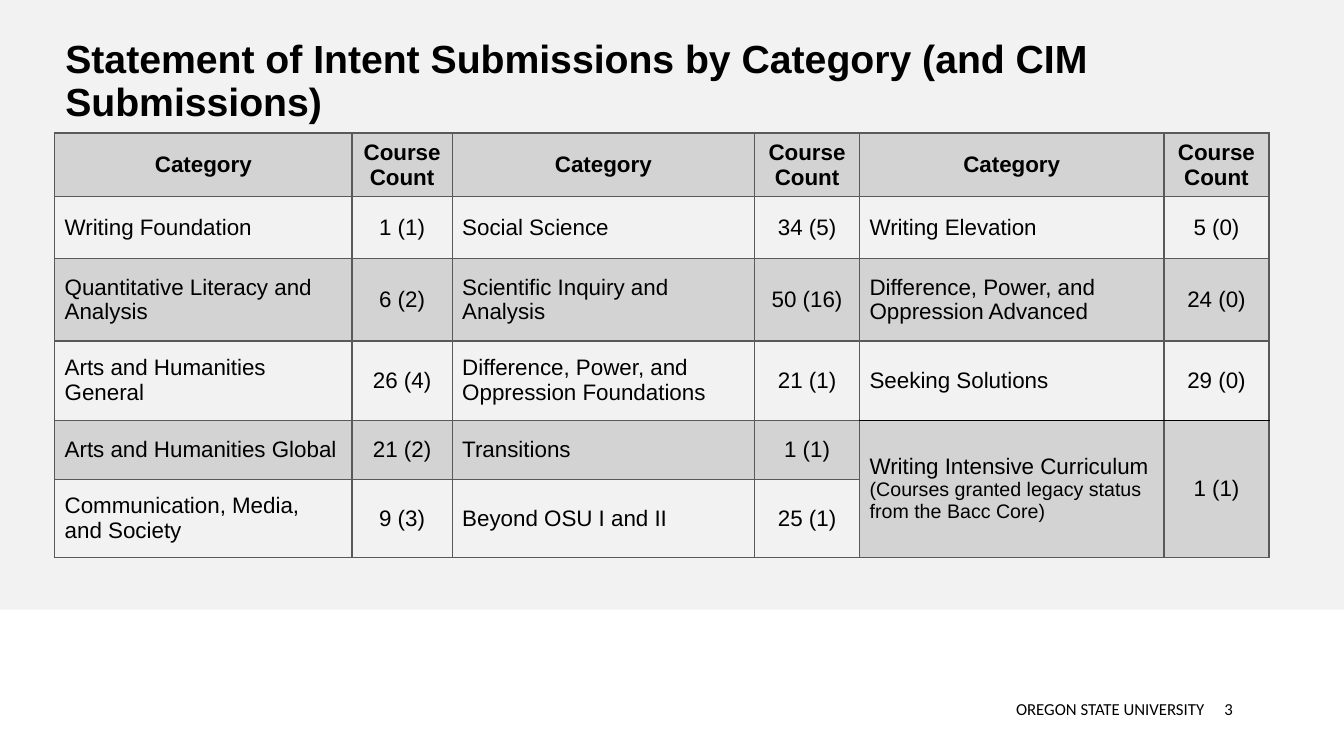
from lxml import etree
from pptx import Presentation
from pptx.dml.color import RGBColor
from pptx.enum import shapes, text
from pptx.oxml import ns
from pptx.util import Pt

MID = text.MSO_ANCHOR.MIDDLE
LEFT, MIDDLE, RIGHT = text.PP_ALIGN.LEFT, text.PP_ALIGN.CENTER, text.PP_ALIGN.RIGHT
GREY, BLACK, WHITE, PALE = "595959", "000000", "FFFFFF", "F2F2F2"

HEAD = ["Category", "Course Count"] * 3
ROWS = [
    HEAD,
    ["Writing Foundation", "1 (1)", "Social Science", "34 (5)", "Writing Elevation", "5 (0)"],
    ["Quantitative Literacy and Analysis", "6 (2)", "Scientific Inquiry and Analysis", "50 (16)",
     "Difference, Power, and Oppression Advanced", "24 (0)"],
    ["Arts and Humanities General", "26 (4)", "Difference, Power, and Oppression Foundations", "21 (1)",
     "Seeking Solutions", "29 (0)"],
    ["Arts and Humanities Global", "21 (2)", "Transitions", "1 (1)",
     [("Writing Intensive Curriculum ", 16),
      ("(Courses granted legacy status from the Bacc Core)", 14)], "1 (1)"],
    ["Communication, Media, and Society", "9 (3)", "Beyond OSU I and II", "25 (1)", "", ""],
]
WIDE = [212.5, 71.5, 216, 75, 217.5, 75]
HIGH = [44, 44, 59, 56.5, 42.5, 55.5]


def tint(code):
    return RGBColor.from_string(code)


class Page:
    def __init__(self, deck):
        self.slide = deck.slides.add_slide(deck.slide_layouts[5])
        self.back(PALE)

    def back(self, code):
        fill = self.slide.background.fill
        fill.solid()
        fill.fore_color.rgb = tint(code)

    def put(self, frame, runs, face="Arial", bold=False, align=LEFT):
        para = frame.paragraphs[0]
        para.alignment = align
        for words, size in runs:
            run = para.add_run()
            run.text = words
            font = run.font
            font.name, font.size, font.bold = face, Pt(size), bold
            font.color.rgb = tint(BLACK)
        return para

    def place(self, shape, x, y, w, h):
        shape.left, shape.top, shape.width, shape.height = Pt(x), Pt(y), Pt(w), Pt(h)

    def title(self, words, *box):
        shape = self.slide.shapes.title
        self.place(shape, *box)
        frame = shape.text_frame
        frame.word_wrap = True
        frame.auto_size = text.MSO_AUTO_SIZE.NONE
        frame.vertical_anchor = MID
        self.put(frame, [(words, 28)], bold=True).line_spacing = 0.9

    def band(self, code, *box):
        shape = self.slide.shapes.add_shape(shapes.MSO_SHAPE.RECTANGLE, *map(Pt, box))
        shape.shadow.inherit = False
        shape.fill.solid()
        shape.fill.fore_color.rgb = tint(code)
        shape.line.fill.background()

    def label(self, words, align, *box):
        frame = self.slide.shapes.add_textbox(*map(Pt, box)).text_frame
        frame.word_wrap = True
        frame.vertical_anchor = MID
        self.put(frame, [(words, 12)], face="Calibri", align=align)

    def edge(self, cell, side, code):
        line = etree.SubElement(cell._tc.get_or_add_tcPr(), ns.qn("a:ln" + side), w=str(Pt(1)))
        fill = etree.SubElement(line, ns.qn("a:solidFill"))
        etree.SubElement(fill, ns.qn("a:srgbClr"), val=code)

    def shade(self, cell, code, alpha):
        cell.fill.solid()
        cell.fill.fore_color.rgb = tint(code)
        color = cell._tc.tcPr.find(ns.qn("a:solidFill")).find(ns.qn("a:srgbClr"))
        etree.SubElement(color, ns.qn("a:alpha"), val=str(alpha * 1000))

    def table(self, rows, wide, high, x, y):
        box = map(Pt, (x, y, sum(wide), sum(high)))
        grid = self.slide.shapes.add_table(len(rows), len(wide), *box).table
        grid.first_row = grid.horz_banding = False
        for col, w in zip(grid.columns, wide):
            col.width = Pt(w)
        for row, h in zip(grid.rows, high):
            row.height = Pt(h)
        # The last category fills two rows
        for c in (4, 5):
            grid.cell(4, c).merge(grid.cell(5, c))
        for r, row in enumerate(rows):
            for c, words in enumerate(row):
                cell = grid.cell(r, c)
                cell.vertical_anchor = MID
                # Black rule above the merged cells
                dark = {(3, "B"), (4, "T")} if c > 3 else set()
                for side in "LRTB":
                    self.edge(cell, side, BLACK if (r, side) in dark else GREY)
                if r % 2 == 0 or cell.is_spanned:
                    self.shade(cell, GREY, 20)
                else:
                    cell.fill.background()
                if words:
                    runs = [(words, 16)] if isinstance(words, str) else words
                    mid = r == 0 or c % 2
                    self.put(cell.text_frame, runs, bold=r == 0, align=MIDDLE if mid else LEFT)


def main():
    deck = Presentation()
    deck.slide_width, deck.slide_height = Pt(960), Pt(540)
    page = Page(deck)
    # Footer
    page.band(WHITE, 0, 435.5, 960, 104.5)
    page.label("OREGON STATE UNIVERSITY", RIGHT, 341.5, 492, 526, 29)
    page.label("3", LEFT, 867.5, 492, 50, 29)
    # Title and table
    page.title("Statement of Intent Submissions by Category (and CIM Submissions)", 39.5, 6.5, 885, 104.5)
    page.table(ROWS, WIDE, HIGH, 39, 95)
    deck.save("out.pptx")


if __name__ == "__main__":
    main()
